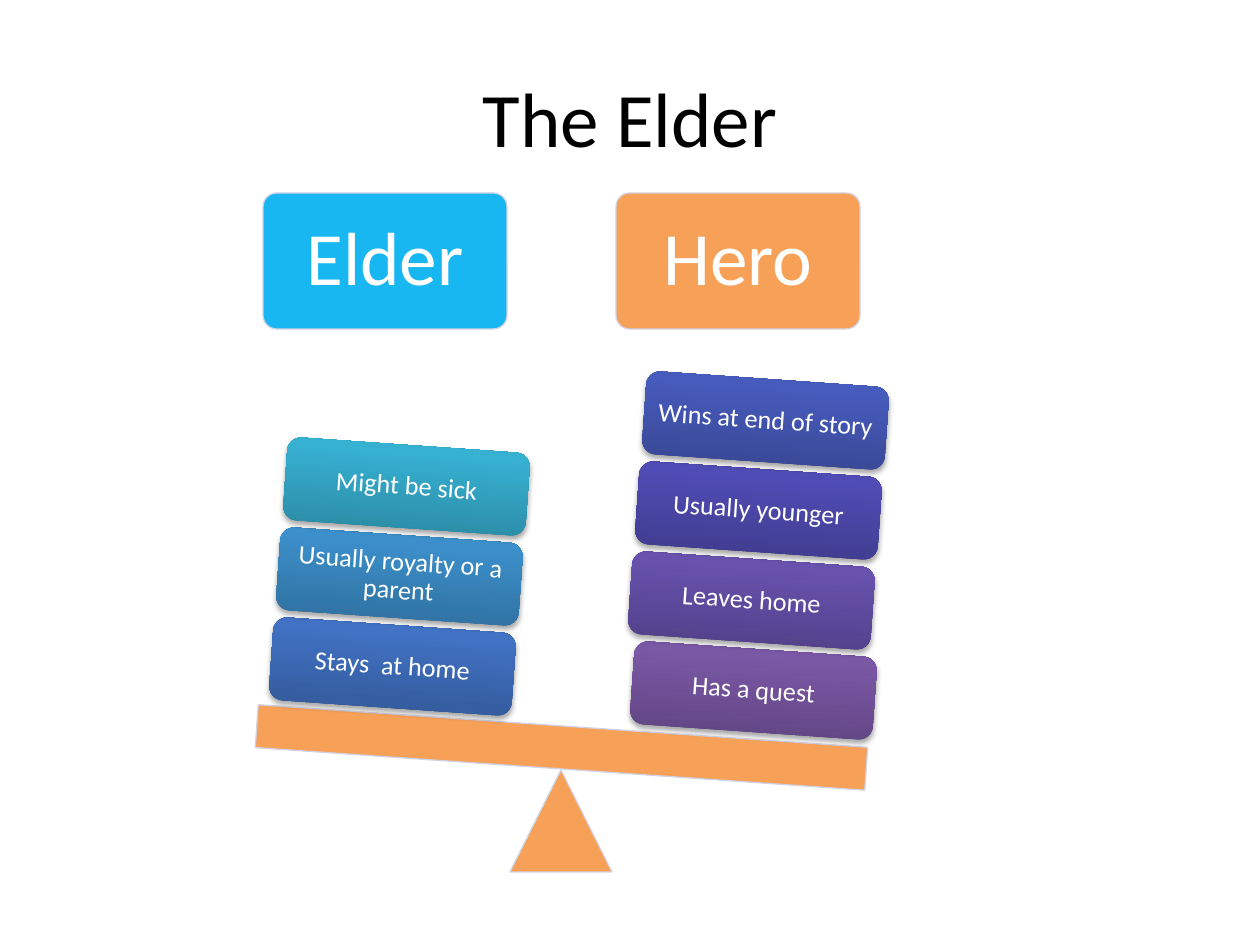
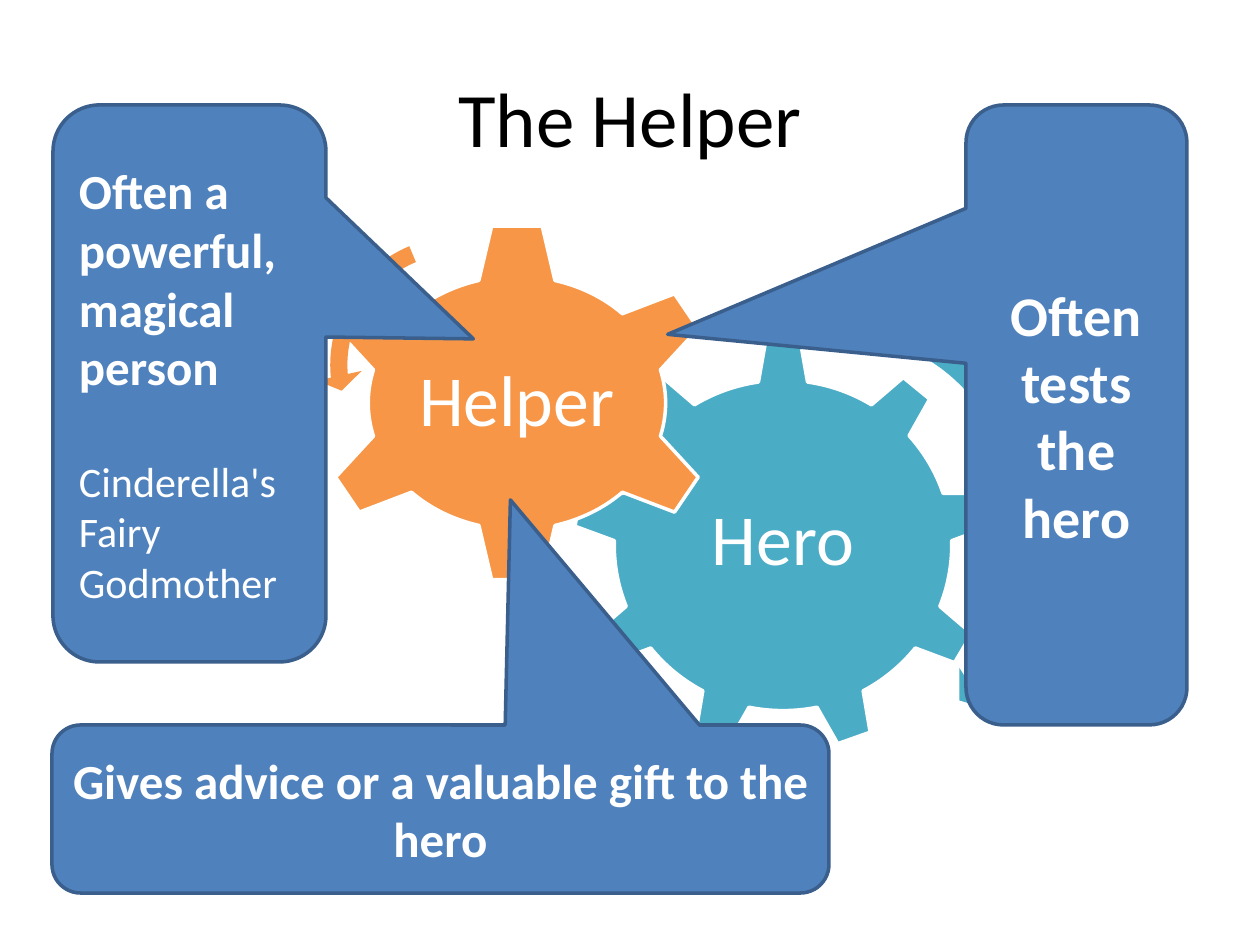
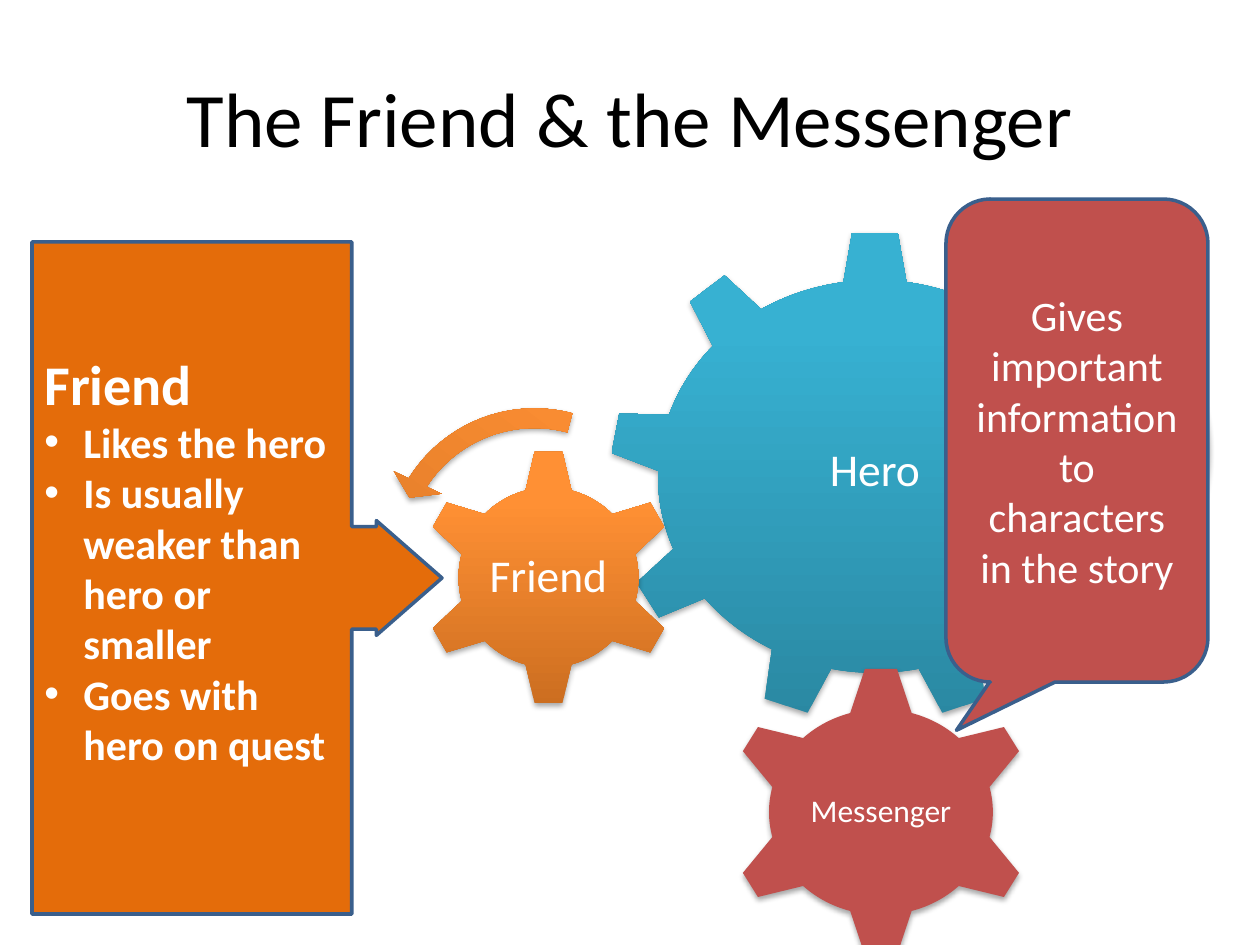
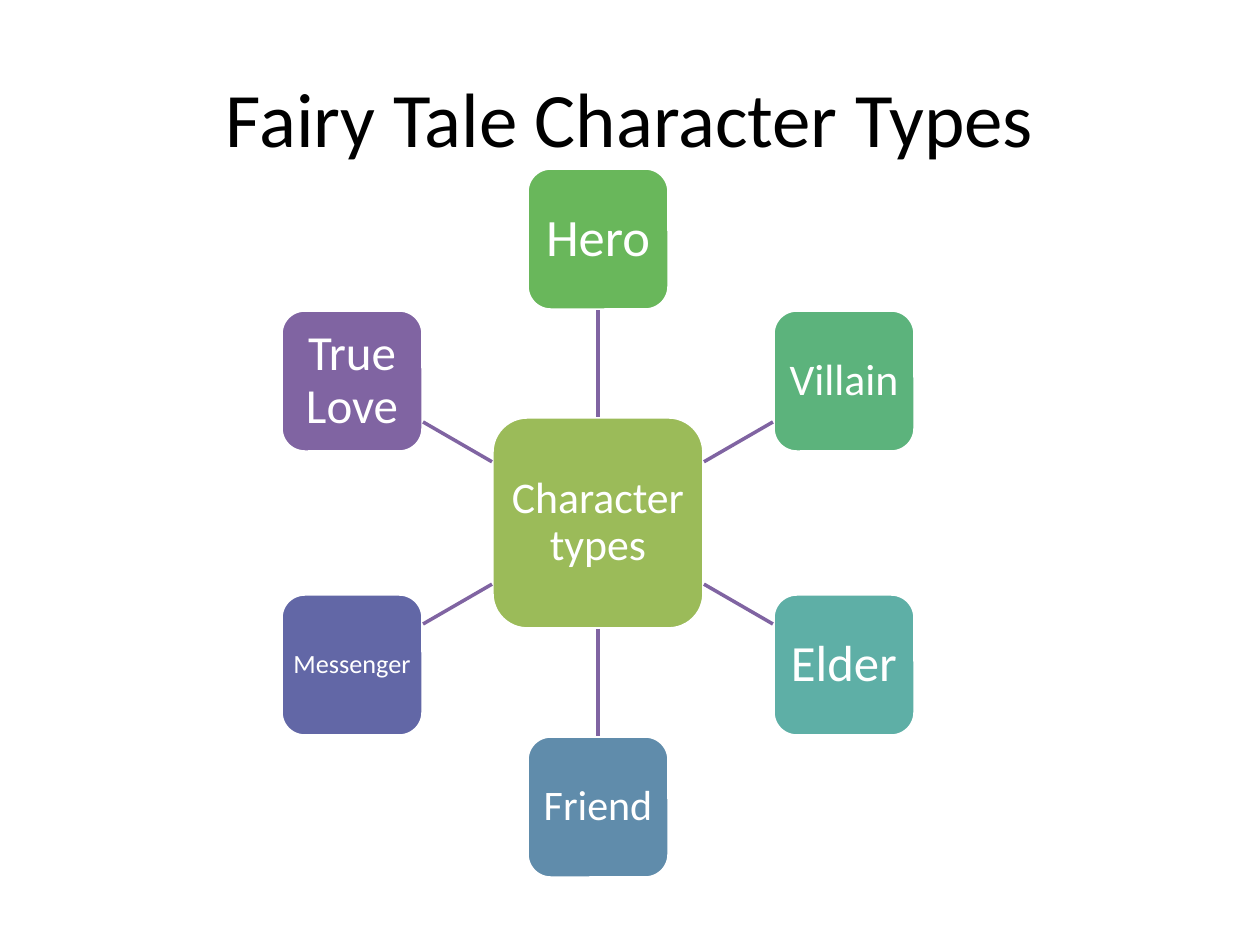
from math import cos, radians, sin

from lxml.etree import SubElement
from pptx import Presentation
from pptx.dml.color import RGBColor
from pptx.enum.shapes import MSO_CONNECTOR, MSO_SHAPE as SHAPE
from pptx.enum.text import MSO_ANCHOR, PP_ALIGN
from pptx.oxml.ns import qn
from pptx.util import Inches, Pt

FONT = "Calibri"
PX_PER_INCH = 126
TITLE_BOX = (63, 38, 1134, 158)
COLORS = {
    "black": "000000", "white": "FFFFFF", "blue": "4F81BD", "navy": "3A5F8C",
    "teal": "4BACC6", "orange": "F79646", "deep_orange": "E46C0A",
    "red": "C0504D", "sky": "00B0F0", "purple": "8064A2", "edge": "D2D2E4",
    "olive": "9BBB59", "green": "69B75B", "mint": "5CB37C", "sea": "5EAFA6",
    "steel": "608CAB", "indigo": "6267A6",
}
GRADIENTS = {
    "quest": ("5F4480", "7B58A6"), "leaves": ("503F86", "6852AE"),
    "younger": ("3E3B8B", "504CB5"), "wins": ("374691", "475BBC"),
    "stays": ("325897", "4172C4"), "royalty": ("2E6E9C", "3C8FCB"),
    "aqua": ("2A88A2", "37B1D2"), "amber": ("CC6E20", "FF9034"),
}

CARDS = [("Elder", 263, "sky"), ("Hero", 616, "orange")]
CARD_TOP, CARD_SIZE = 193, (244, 136)
TILT = 4
TILE_SIZE, TILE_STEP = (243, 83), 90
STACKS = [
    (649, [("Has a quest", 632, "quest"), ("Leaves home", 630, "leaves"),
           ("Usually younger", 637, "younger"),
           ("Wins at end of story", 644, "wins")]),
    (625, [("Stays  at home", 271, "stays"),
           ("Usually royalty or a parent", 278, "royalty"),
           ("Might be sick", 285, "aqua")]),
]
SEESAW = [
    dict(kind=SHAPE.ISOSCELES_TRIANGLE, box=(510, 770, 102, 102)),
    dict(kind=SHAPE.RECTANGLE, box=(256, 726, 611, 43), rot=TILT),
]

CLOCKWISE = (0.05, 3.13, 31.33, 152.34, 0.06)
COUNTERCLOCKWISE = (0.06, 4.3, 104.89, 148.38, 0.08)
CALLOUT = dict(kind=SHAPE.ROUNDED_RECTANGULAR_CALLOUT, line="navy")
HELPER_PARTS = [
    dict(kind=SHAPE.GEAR_9, box=(573, 339, 420, 413), fill="teal",
         line="white", label=("Hero", 41)),
    dict(kind=SHAPE.GEAR_6, box=(314, 222, 406, 362), fill="orange",
         line="white", label=("Helper", 41)),
    dict(kind=SHAPE.CIRCULAR_ARROW, box=(655, 305, 398, 461), fill="teal",
         adj=CLOCKWISE),
    dict(kind=SHAPE.LEFT_CIRCULAR_ARROW, box=(316, 222, 286, 286),
         fill="orange", adj=COUNTERCLOCKWISE),
    dict(CALLOUT, box=(52, 725, 777, 168), fill="blue",
         adj=(0.09, -1.84, 0.17),
         paras=[dict(text="Gives advice or a valuable gift to the hero",
                     size=28, bold=True)]),
    dict(CALLOUT, box=(966, 105, 221, 620), fill="blue",
         adj=(-1.85, -0.13, 0.17),
         paras=[dict(text="Often tests the hero", size=32, bold=True)]),
    dict(CALLOUT, box=(53, 105, 273, 557), fill="blue",
         adj=(1.04, -0.08, 0.17), align=PP_ALIGN.LEFT,
         paras=[dict(text="Often a powerful, magical person", size=28,
                     bold=True),
                dict(text="Cinderella's Fairy Godmother", size=24,
                     before=34)]),
]

FRIEND_TRAITS = ["Likes the hero", "Is usually weaker than hero or smaller",
                 "Goes with hero on quest"]
FRIEND_PARTS = [
    dict(kind=SHAPE.GEAR_9, box=(609, 231, 532, 491), fill="aqua",
         shadow=True, label=("Hero", 26)),
    dict(kind=SHAPE.GEAR_6, box=(420, 449, 257, 257), fill="amber",
         shadow=True, label=("Friend", 26)),
    dict(kind=SHAPE.CIRCULAR_ARROW, box=(788, 231, 436, 436), fill="aqua",
         shadow=True, adj=CLOCKWISE),
    dict(kind=SHAPE.LEFT_CIRCULAR_ARROW, box=(370, 392, 329, 329),
         fill="amber", shadow=True, rot=37.5, adj=COUNTERCLOCKWISE),
    dict(kind=SHAPE.RIGHT_ARROW_CALLOUT, box=(32, 242, 410, 672),
         fill="deep_orange", line="navy", adj=(0.25, 0.14, 0.16, 0.78),
         align=PP_ALIGN.LEFT, bottom=44,
         paras=[dict(text="Friend", size=32, bold=True)]
         + [dict(text=t, size=24, bold=True, bullet=True)
            for t in FRIEND_TRAITS]),
    dict(kind=SHAPE.GEAR_6, box=(725, 665, 312, 294), fill="red",
         shadow=True, adj=(0.15, 0.05), label=("Messenger", 18)),
    dict(CALLOUT, box=(946, 199, 262, 483), fill="red",
         adj=(-0.46, 0.6, 0.17),
         paras=[dict(text="Gives important information to characters "
                          "in the story", size=24)]),
]

HUB = ("Character types", 25, "olive")
HUB_CENTER, HUB_SIZE = (598, 523), 212
SPOKE_RADIUS, NODE_SIZE = 284, 142
NODES = [("Hero", 30, "green"), ("Villain", 25, "mint"), ("Elder", 29, "sea"),
         ("Friend", 24, "steel"), ("Messenger", 15, "indigo"),
         ("True Love", 28, "purple")]


def px(n):
    return int(Inches(n / PX_PER_INCH))


def rgb(name):
    return RGBColor.from_string(COLORS[name])


def add_slide(prs, title):
    s = prs.slides.add_slide(prs.slide_layouts[5])
    sp = s.shapes.title
    sp.left, sp.top, sp.width, sp.height = map(px, TITLE_BOX)
    write(sp, [dict(text=title, size=44)], color="black")
    return s


def write(sp, paras, color="white", align=PP_ALIGN.CENTER, spacing=None,
          inset=None, bottom=None, wrap=True):
    tf = sp.text_frame
    tf.word_wrap = wrap
    tf.vertical_anchor = MSO_ANCHOR.MIDDLE
    if inset is not None:
        tf.margin_left = tf.margin_right = px(inset)
        tf.margin_top = tf.margin_bottom = px(inset)
    if bottom is not None:
        tf.margin_bottom = px(bottom)
    tf.text = "\n".join(item["text"] for item in paras)
    for p, item in zip(tf.paragraphs, paras):
        p.alignment = align
        if spacing:
            p.line_spacing = spacing
        if "before" in item:
            p.space_before = Pt(item["before"])
        font = p.runs[0].font
        font.name, font.size = FONT, Pt(item["size"])
        font.bold = item.get("bold", False)
        font.color.rgb = rgb(color)
        if item.get("bullet"):
            add_bullet(p)


def add_bullet(p):
    pPr = p._p.get_or_add_pPr()
    pPr.set("marL", str(px(39)))
    pPr.set("indent", str(-px(39)))
    SubElement(pPr, qn("a:buFont")).set("typeface", "Arial")
    SubElement(pPr, qn("a:buChar")).set("char", "•")


def paint(sp, fill, alpha):
    if fill in GRADIENTS:
        sp.fill.gradient()
        sp.fill.gradient_angle = 90
        stops = zip(sp.fill.gradient_stops, GRADIENTS[fill], (0, 0.8))
        for stop, color, position in stops:
            stop.color.rgb = RGBColor.from_string(color)
            stop.position = position
        return
    sp.fill.solid()
    sp.fill.fore_color.rgb = rgb(fill)
    if alpha:
        color = sp._element.spPr.find(qn("a:solidFill"))[0]
        SubElement(color, qn("a:alpha")).set("val", str(alpha * 1000))


def add_shadow(sp):
    effects = sp._element.spPr.find(qn("a:effectLst"))
    shadow = SubElement(effects, qn("a:outerShdw"), blurRad="40000",
                        dist="23000", dir="5400000", rotWithShape="0")
    color = SubElement(shadow, qn("a:srgbClr"), val=COLORS["black"])
    SubElement(color, qn("a:alpha"), val="35000")


def draw(s, kind, box, fill, line=None, width=2, rot=0, adj=(), alpha=None,
         shadow=False, label=None, paras=None, **text_options):
    sp = s.shapes.add_shape(kind, *map(px, box))
    sp.rotation = rot
    for i, value in enumerate(adj):
        sp.adjustments[i] = value
    paint(sp, fill, alpha)
    if line:
        sp.line.color.rgb = rgb(line)
        sp.line.width = Pt(width)
    else:
        sp.line.fill.background()
    sp.shadow.inherit = False
    if shadow:
        add_shadow(sp)
    if label:
        text, size = label
        options = dict(spacing=0.9, inset=5, wrap=" " in text)
        write(sp, [dict(text=text, size=size)], **{**options, **text_options})
    elif paras:
        write(sp, paras, **text_options)
    return sp


def build_elder(prs):
    s = add_slide(prs, "The Elder")
    pale = dict(line="edge", width=0.75, alpha=90)
    for text, left, fill in CARDS:
        draw(s, SHAPE.ROUNDED_RECTANGLE, (left, CARD_TOP, *CARD_SIZE), fill,
             adj=(0.1,), label=(text, 43), **pale)
    for part in SEESAW:
        draw(s, fill="orange", **part, **pale)
    for base, tiles in STACKS:
        for i, (text, left, fill) in enumerate(tiles):
            draw(s, SHAPE.ROUNDED_RECTANGLE,
                 (left, base - i * TILE_STEP, *TILE_SIZE), fill, rot=TILT,
                 shadow=True, label=(text, 15), inset=8, wrap=True)


def build_parts(prs, title, parts):
    s = add_slide(prs, title)
    for part in parts:
        draw(s, **part)


def add_square(s, center, size, text, points, fill):
    x, y = center
    return draw(s, SHAPE.ROUNDED_RECTANGLE,
                (x - size // 2, y - size // 2, size, size), fill,
                line="white", label=(text, points))


def add_spoke(s, hub, node, dx, dy):
    x, y = HUB_CENTER
    reach = max(abs(dx), abs(dy))
    near = HUB_SIZE / 2 / reach
    far = SPOKE_RADIUS - NODE_SIZE / 2 / reach
    ends = [px(v) for t in (near, far) for v in (x + t * dx, y + t * dy)]
    c = s.shapes.add_connector(MSO_CONNECTOR.STRAIGHT, *ends)
    c.line.color.rgb = rgb("purple")
    c.line.width = Pt(2)
    SubElement(c._element.spPr, qn("a:effectLst"))
    if abs(dx) < 0.01:
        c.begin_connect(hub, 0 if dy < 0 else 2)
        c.end_connect(node, 2 if dy < 0 else 0)


def build_types(prs):
    s = add_slide(prs, "Fairy Tale Character Types")
    hub = add_square(s, HUB_CENTER, HUB_SIZE, *HUB)
    x, y = HUB_CENTER
    for i, item in enumerate(NODES):
        angle = radians(i * 360 / len(NODES))
        dx, dy = sin(angle), -cos(angle)
        center = (round(x + SPOKE_RADIUS * dx), round(y + SPOKE_RADIUS * dy))
        node = add_square(s, center, NODE_SIZE, *item)
        add_spoke(s, hub, node, dx, dy)


def main():
    prs = Presentation()
    prs.slide_width, prs.slide_height = Inches(10), Inches(7.5)
    build_elder(prs)
    build_parts(prs, "The Helper", HELPER_PARTS)
    build_parts(prs, "The Friend & the Messenger", FRIEND_PARTS)
    build_types(prs)
    prs.save("out.pptx")


if __name__ == "__main__":
    main()
